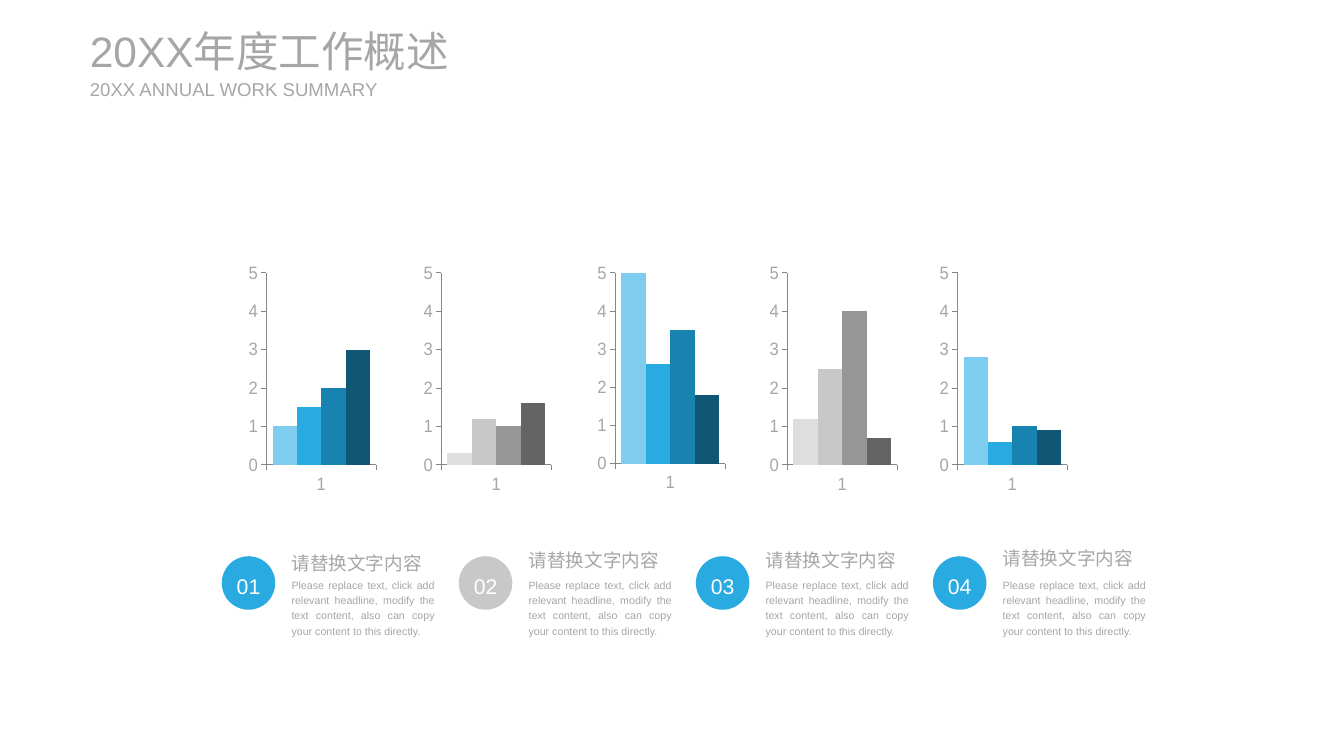
from lxml import etree
from pptx import Presentation
from pptx.chart import data
from pptx.dml import color
from pptx.enum import chart as charts, shapes, text
from pptx.oxml import ns
from pptx.util import Inches, Pt

FONT = "Arial"
COLORS = {"text": "A6A6A6", "axis": "868686", "white": "FFFFFF",
          "blue": "29ABE2", "gray": "C8C8C8"}
BLUES = ["7FCDEE", "29ABE2", "1883B0", "105776"]
GRAYS = ["DEDEDE", "C8C8C8", "969696", "646464"]

TITLE = "20XX年度工作概述"
SUBTITLE = "20XX ANNUAL WORK SUMMARY"
HEADLINE = "请替换文字内容"
BODY = ("Please replace text, click add relevant headline, modify the text "
        "content, also can copy your content to this directly.")

# left edge, values, bar colours, top of the plot as a share of the chart
CHARTS = [
    (2.6, [1, 1.5, 2, 3], BLUES, 0.031),
    (4.43, [0.3, 1.2, 1, 1.6], GRAYS, 0.031),
    (6.25, [5, 2.6, 3.5, 1.8], BLUES, 0),
    (8.05, [1.2, 2.5, 4, 0.7], GRAYS, 0.031),
    (9.83, [2.8, 0.6, 1, 0.9], BLUES, 0.031),
]
CHART_TOP, CHART_WIDTH, CHART_HEIGHT = 2.75, 1.36, 2.42

# number, circle colour, top of the headline
ITEMS = [("01", "blue", 5.73), ("02", "gray", 5.7),
         ("03", "blue", 5.7), ("04", "blue", 5.68)]
ITEM_LEFT, ITEM_STEP, TEXT_OFFSET = 2.32, 2.48, 0.73


def rgb(value):
    return color.RGBColor.from_string(value)


def place(box, left, top, width, height):
    box.left, box.top = Inches(left), Inches(top)
    box.width, box.height = Inches(width), Inches(height)


def write(box, words, size, ink="text", align=text.PP_ALIGN.LEFT,
          anchor=text.MSO_ANCHOR.TOP, spacing=None, before=None, grow=True):
    frame = box.text_frame
    frame.margin_left = frame.margin_right = 0
    frame.margin_top = frame.margin_bottom = 0
    frame.word_wrap = True
    frame.vertical_anchor = anchor
    fit = text.MSO_AUTO_SIZE
    frame.auto_size = fit.SHAPE_TO_FIT_TEXT if grow else fit.NONE
    para = frame.paragraphs[0]
    para.alignment = align
    para.line_spacing = spacing
    if before:
        para.space_before = Pt(before)
    span = para.add_run()
    span.text = words
    span.font.name = FONT
    span.font.size = Pt(size)
    span.font.color.rgb = rgb(COLORS[ink])


def add_text(page, bounds, words, size, **style):
    box = page.shapes.add_textbox(*map(Inches, bounds))
    write(box, words, size, **style)


def set_plot_layout(chart, left, top, width, height):
    """Fix the inner plot area, in shares of the chart."""
    plot_area = chart._chartSpace.chart.plotArea
    for old in plot_area.findall(ns.qn("c:layout")):
        plot_area.remove(old)
    layout = etree.Element(ns.qn("c:layout"))
    manual = etree.SubElement(layout, ns.qn("c:manualLayout"))
    settings = [("layoutTarget", "inner"), ("xMode", "edge"), ("yMode", "edge"),
                ("x", left), ("y", top), ("w", width), ("h", height)]
    for tag, value in settings:
        etree.SubElement(manual, ns.qn("c:" + tag)).set("val", str(value))
    plot_area.insert(0, layout)


def add_bars(page, left, values, fills, plot_top):
    numbers = data.CategoryChartData()
    numbers.categories = ["1"]
    for index, value in enumerate(values, 1):
        numbers.add_series(f"Series {index}", [value])
    bounds = map(Inches, (left, CHART_TOP, CHART_WIDTH, CHART_HEIGHT))
    chart = page.shapes.add_chart(
        charts.XL_CHART_TYPE.COLUMN_CLUSTERED, *bounds, numbers).chart
    chart.has_legend = chart.has_title = False
    chart.font.name, chart.font.size = FONT, Pt(14)
    chart.font.color.rgb = rgb(COLORS["text"])
    plot = chart.plots[0]
    plot.gap_width, plot.overlap, plot.vary_by_categories = 50, 0, False
    for series, fill in zip(plot.series, fills):
        series.format.fill.solid()
        series.format.fill.fore_color.rgb = rgb(fill)
    for axis in (chart.category_axis, chart.value_axis):
        axis.has_major_gridlines = False
        axis.major_tick_mark = charts.XL_TICK_MARK.OUTSIDE
        axis.minor_tick_mark = charts.XL_TICK_MARK.NONE
        axis.format.line.color.rgb = rgb(COLORS["axis"])
        axis.format.line.width = Pt(0.75)
    scale = chart.value_axis
    scale.minimum_scale, scale.maximum_scale, scale.major_unit = 0, 5, 1
    set_plot_layout(chart, 0.037, plot_top, 0.944, 0.863)


def add_item(page, left, number, fill, headline_top):
    text_left = left + TEXT_OFFSET
    add_text(page, (text_left, 6.03, 1.5, 0.63), BODY, 8,
             align=text.PP_ALIGN.JUSTIFY, spacing=1.2, before=7.5)
    add_text(page, (text_left, headline_top, 1.5, 0.28), HEADLINE, 14,
             spacing=1.2, before=7.5)
    circle = page.shapes.add_shape(
        shapes.MSO_SHAPE.OVAL, *map(Inches, (left, 5.82, 0.56, 0.56)))
    circle.shadow.inherit = False
    circle.fill.solid()
    circle.fill.fore_color.rgb = rgb(COLORS[fill])
    circle.line.fill.background()
    write(circle, number, 16, ink="white", align=text.PP_ALIGN.CENTER,
          anchor=text.MSO_ANCHOR.MIDDLE, spacing=1.2, grow=False)


def main():
    deck = Presentation()
    deck.slide_width, deck.slide_height = Inches(14.06), Inches(7.91)
    page = deck.slides.add_slide(deck.slide_layouts.get_by_name("Title Only"))
    place(page.shapes.title, 0.94, 0.26, 4.32, 0.54)
    write(page.shapes.title, TITLE, 32, anchor=text.MSO_ANCHOR.MIDDLE)
    add_text(page, (0.94, 0.81, 3.07, 0.24), SUBTITLE, 14,
             anchor=text.MSO_ANCHOR.MIDDLE)
    for chart in CHARTS:
        add_bars(page, *chart)
    for index, item in enumerate(ITEMS):
        add_item(page, ITEM_LEFT + index * ITEM_STEP, *item)
    deck.save("out.pptx")


if __name__ == "__main__":
    main()
